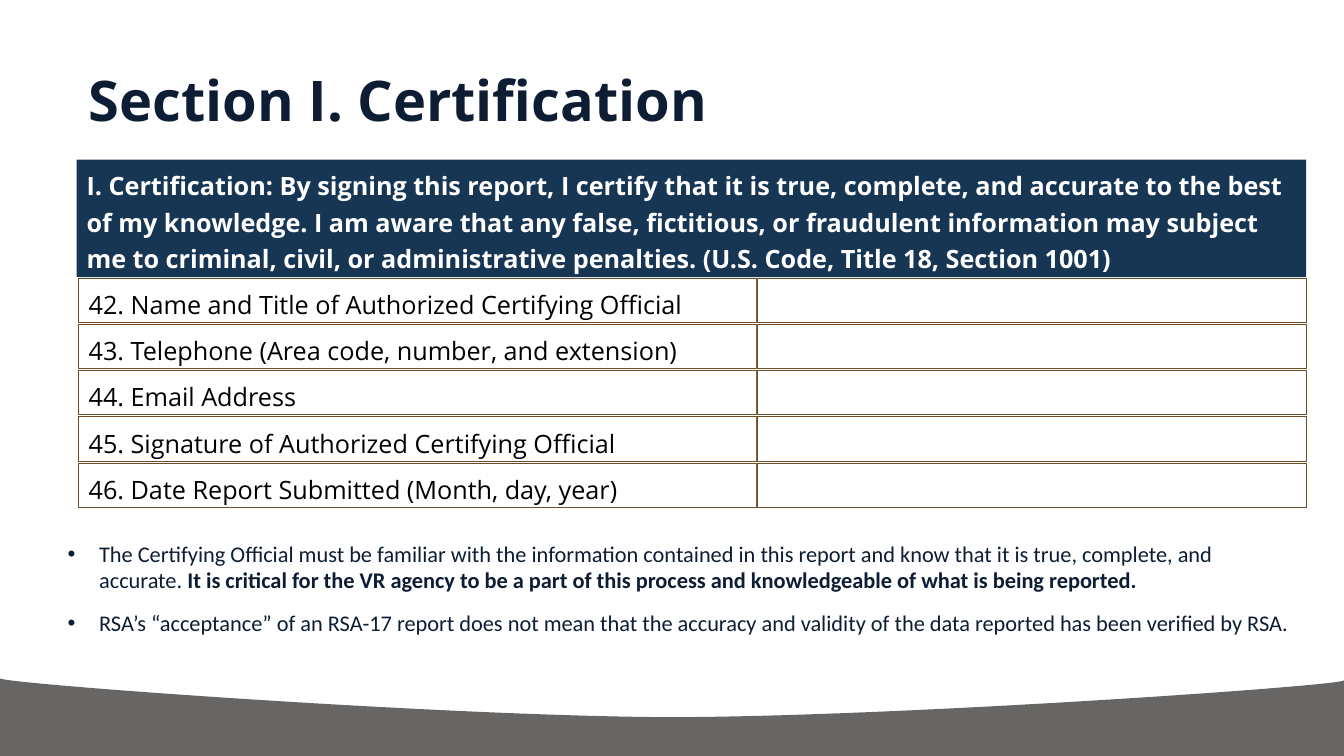
from pptx import Presentation
from pptx.dml.color import RGBColor
from pptx.enum.shapes import MSO_SHAPE
from pptx.enum.text import MSO_ANCHOR, PP_ALIGN
from pptx.oxml import parse_xml
from pptx.oxml.ns import nsdecls, qn
from pptx.util import Pt

PX = 9525
WIDE, HIGH = 1280, 720
COLORS = {
    "ink": "0D1D34",
    "navy": "173654",
    "brown": "6D4C26",
    "gray": "686665",
    "white": "FFFFFF",
    "black": "000000",
}


def tint(name):
    return RGBColor.from_string(COLORS[name])


class Deck:
    head = "Open Sans"
    body = "Calibri"

    def __init__(self):
        self.file = Presentation()
        self.file.slide_width = WIDE * PX
        self.file.slide_height = HIGH * PX
        self.slide = self.file.slides.add_slide(self.file.slide_layouts[6])
        self.shapes = self.slide.shapes

    def style(self, para, font, size, color, bold=False):
        for run in para.runs:
            run.font.name = font
            run.font.size = Pt(size)
            run.font.bold = bold
            run.font.color.rgb = tint(color)

    def paint(self, shape, fill, line=None):
        shape.shadow.inherit = False
        shape.fill.solid()
        shape.fill.fore_color.rgb = tint(fill)
        if line:
            shape.line.color.rgb = tint(line)
            shape.line.width = Pt(0.5)
        else:
            shape.line.fill.background()

    def box(self, left, top, width, height, fill, line=None, lines=(), color="black", bold=False):
        shape = self.shapes.add_shape(
            MSO_SHAPE.RECTANGLE, left * PX, top * PX, width * PX, height * PX)
        self.paint(shape, fill, line)
        if lines:
            frame = shape.text_frame
            frame.word_wrap = True
            frame.vertical_anchor = MSO_ANCHOR.TOP
            frame.margin_bottom = 0
            frame.text = "\n".join(lines)
            for para in frame.paragraphs:
                para.alignment = PP_ALIGN.LEFT
                para.line_spacing = 1.2
                self.style(para, self.head, 18, color, bold)

    def frame(self, left, top, width, height):
        shape = self.shapes.add_textbox(left * PX, top * PX, width * PX, height * PX)
        shape.text_frame.word_wrap = True
        return shape.text_frame

    def title(self, left, top, width, height, text):
        frame = self.frame(left, top, width, height)
        frame.vertical_anchor = MSO_ANCHOR.BOTTOM
        frame.margin_bottom = 4 * PX
        frame.text = text
        para = frame.paragraphs[0]
        para.line_spacing = 1.02
        self.style(para, self.head, 40, "ink", True)

    def list(self, left, top, width, height, items):
        frame = self.frame(left, top, width, height)
        frame.margin_right = 48 * PX
        for i, (plain, strong) in enumerate(items):
            para = frame.add_paragraph() if i else frame.paragraphs[0]
            para.text = plain
            para.line_spacing = 0.97
            para.space_after = Pt(12)
            props = para._p.get_or_add_pPr()
            props.set("marL", str(48 * PX))
            props.set("indent", str(-30 * PX))
            props.append(parse_xml(f'<a:buFont {nsdecls("a")} typeface="Arial"/>'))
            props.append(parse_xml(f'<a:buChar {nsdecls("a")} char="•"/>'))
            if strong:
                para.add_run().text = strong
            self.style(para, self.body, 16, "ink")
            if strong:
                para.runs[-1].font.bold = True

    def wave(self, start, parts, fill):
        path = self.shapes.build_freeform(*start, scale=PX)
        path.add_line_segments([point for part in parts for point in part], close=True)
        shape = path.convert_to_shape()
        legs = iter(list(shape._element.iter(qn("a:lnTo"))))
        for part in parts:
            first, *rest = [next(legs) for _ in part]
            if rest:
                curve = parse_xml(f'<a:cubicBezTo {nsdecls("a")}/>')
                first.addprevious(curve)
                for leg in (first, *rest):
                    curve.append(leg[0])
                    leg.getparent().remove(leg)
        self.paint(shape, fill)


def main():
    deck = Deck()
    deck.box(0, 711, WIDE, 9, "gray")
    deck.wave((0, 713), [
        [(0, 646)],
        [(0, 651), (422, 682), (636, 683)],
        [(850, 683), (WIDE, 653), (WIDE, 648)],
        [(WIDE, 713)],
        [(WIDE, 718), (994, 722), (640, 722)],
        [(287, 722), (0, 718), (0, 713)],
    ], "gray")
    deck.title(75, 0, 1129, 130, "Section I. Certification")
    deck.box(73, 152, 1171, 112, "navy", color="white", bold=True, lines=(
        "I. Certification: By signing this report, I certify that it is true, complete, and accurate to the best",
        "of my knowledge. I am aware that any false, fictitious, or fraudulent information may subject",
        "me to criminal, civil, or administrative penalties. (U.S. Code, Title 18, Section 1001)",
    ))
    fields = (
        "42. Name and Title of Authorized Certifying Official",
        "43. Telephone (Area code, number, and extension)",
        "44. Email Address",
        "45. Signature of Authorized Certifying Official",
        "46. Date Report Submitted (Month, day, year)",
    )
    for i, field in enumerate(fields):
        top = 265 + 44 * i
        deck.box(75, top, 645, 42, "white", "brown", (field,))
        deck.box(721, top, 523, 42, "white", "brown")
    deck.list(37, 511, 1243, 126, (
        ("The Certifying Official must be familiar with the information contained in this report "
         "and know that it is true, complete, and accurate. ",
         "It is critical for the VR agency to be a part of this process and knowledgeable of "
         "what is being reported."),
        ("RSA’s “acceptance” of an RSA-17 report does not mean that the accuracy and validity "
         "of the data reported has been verified by RSA.", ""),
    ))
    deck.file.save("out.pptx")


if __name__ == "__main__":
    main()
